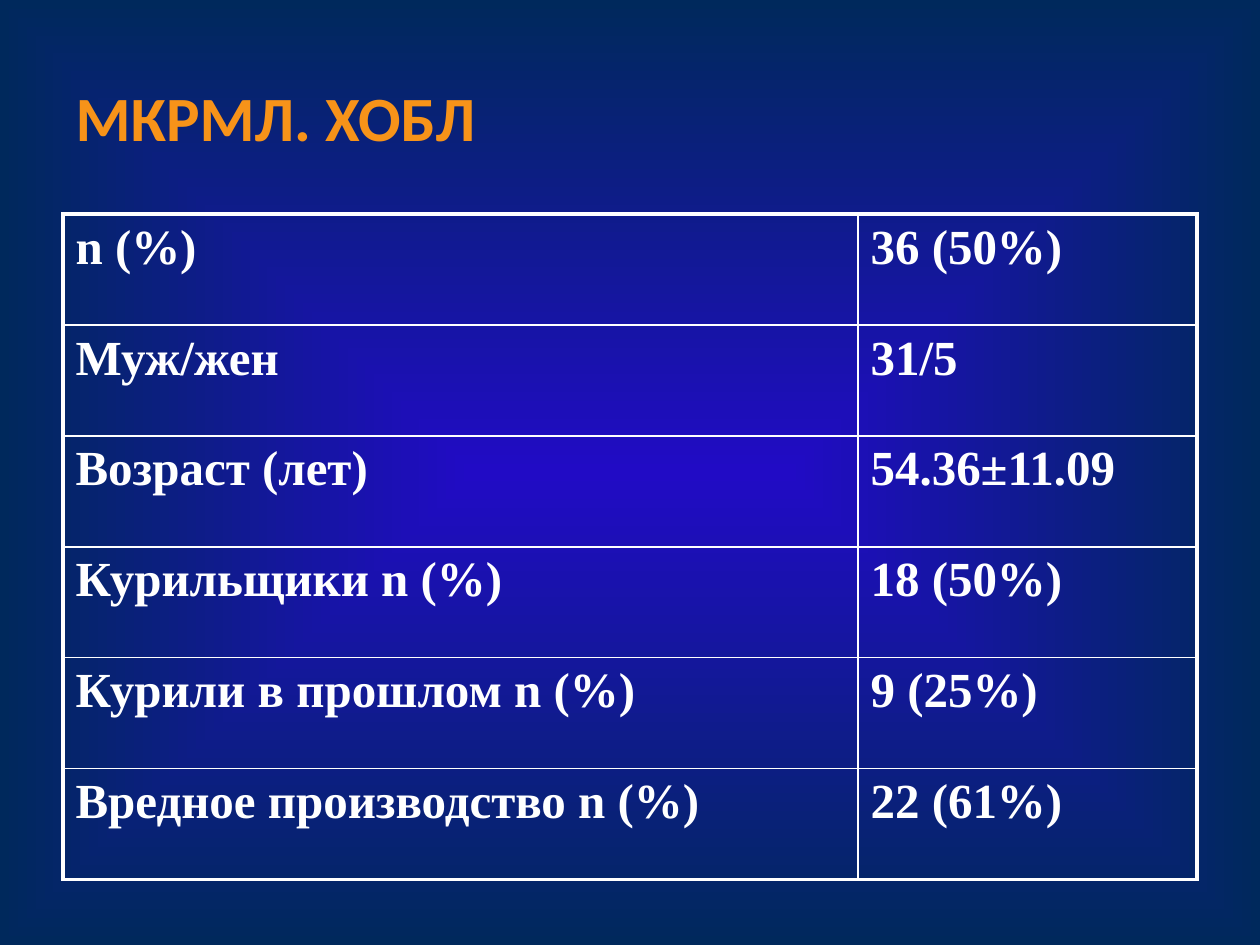
"""Build a slide with a table of COPD patient characteristics."""
from lxml.etree import SubElement
from pptx import Presentation
from pptx.dml.color import RGBColor
from pptx.enum.text import MSO_ANCHOR, PP_ALIGN
from pptx.oxml.ns import qn
from pptx.util import Inches, Pt

TITLE = "МКРМЛ. ХОБЛ"
ROWS = [
    ("n (%)", "36 (50%)"),
    ("Муж/жен", "31/5"),
    ("Возраст (лет)", "54.36±11.09"),
    ("Курильщики n (%)", "18 (50%)"),
    ("Курили в прошлом n (%)", "9 (25%)"),
    ("Вредное производство n (%)", "22 (61%)"),
]
COL_WIDTHS = (6.31, 2.69)
ROW_HEIGHT = 0.88
GRADIENT = ("210BC5", "00295C")
WHITE, ORANGE = "FFFFFF", "F79319"
OUTER, INNER = 2.25, 1


def rgb(color):
    return RGBColor.from_string(color)


def style(p, font, size, color):
    p.alignment = PP_ALIGN.LEFT
    p.font.name, p.font.size, p.font.bold = font, Pt(size), True
    p.font.color.rgb = rgb(color)


def set_background(s):
    fill = s.background.fill
    fill.gradient()
    for stop, color, position in zip(fill.gradient_stops, GRADIENT, (0, 1)):
        stop.color.rgb = rgb(color)
        stop.position = position
    grad = s.element.find(".//" + qn("a:gradFill"))
    grad.remove(grad.find(qn("a:lin")))
    shade = SubElement(grad, qn("a:path"), path="shape")
    SubElement(shade, qn("a:fillToRect"), l="50000", t="50000", r="50000", b="50000")


def set_borders(cell, widths):
    tc_pr = cell._tc.get_or_add_tcPr()
    for side, width in zip("LRTB", widths):
        line = SubElement(tc_pr, qn(f"a:ln{side}"), w=str(Pt(width)))
        solid = SubElement(line, qn("a:solidFill"))
        SubElement(solid, qn("a:srgbClr"), val=WHITE)


def add_title(s):
    title = s.shapes.title
    title.left, title.top, title.width, title.height = map(Inches, (0.5, 0.3, 9, 1.25))
    tf = title.text_frame
    tf.text = TITLE
    tf.vertical_anchor = MSO_ANCHOR.MIDDLE
    style(tf.paragraphs[0], "Calibri", 36, ORANGE)


def add_patient_table(s):
    n_rows, n_cols = len(ROWS), len(COL_WIDTHS)
    table = s.shapes.add_table(n_rows, n_cols, Inches(0.5), Inches(1.7),
                               Inches(sum(COL_WIDTHS)), Inches(ROW_HEIGHT * n_rows)).table
    table.first_row = table.horz_banding = False
    for column, width in zip(table.columns, COL_WIDTHS):
        column.width = Inches(width)
    for i, values in enumerate(ROWS):
        table.rows[i].height = Inches(ROW_HEIGHT)
        for j, value in enumerate(values):
            cell = table.cell(i, j)
            cell.text = value
            style(cell.text_frame.paragraphs[0], "Times New Roman", 28, WHITE)
            edges = (j == 0, j == n_cols - 1, i == 0, i == n_rows - 1)
            set_borders(cell, [OUTER if edge else INNER for edge in edges])
            cell.fill.background()


def main():
    prs = Presentation()
    prs.slide_width, prs.slide_height = Inches(10), Inches(7.5)
    s = prs.slides.add_slide(prs.slide_layouts[5])
    set_background(s)
    add_title(s)
    add_patient_table(s)
    prs.save("out.pptx")


if __name__ == "__main__":
    main()
